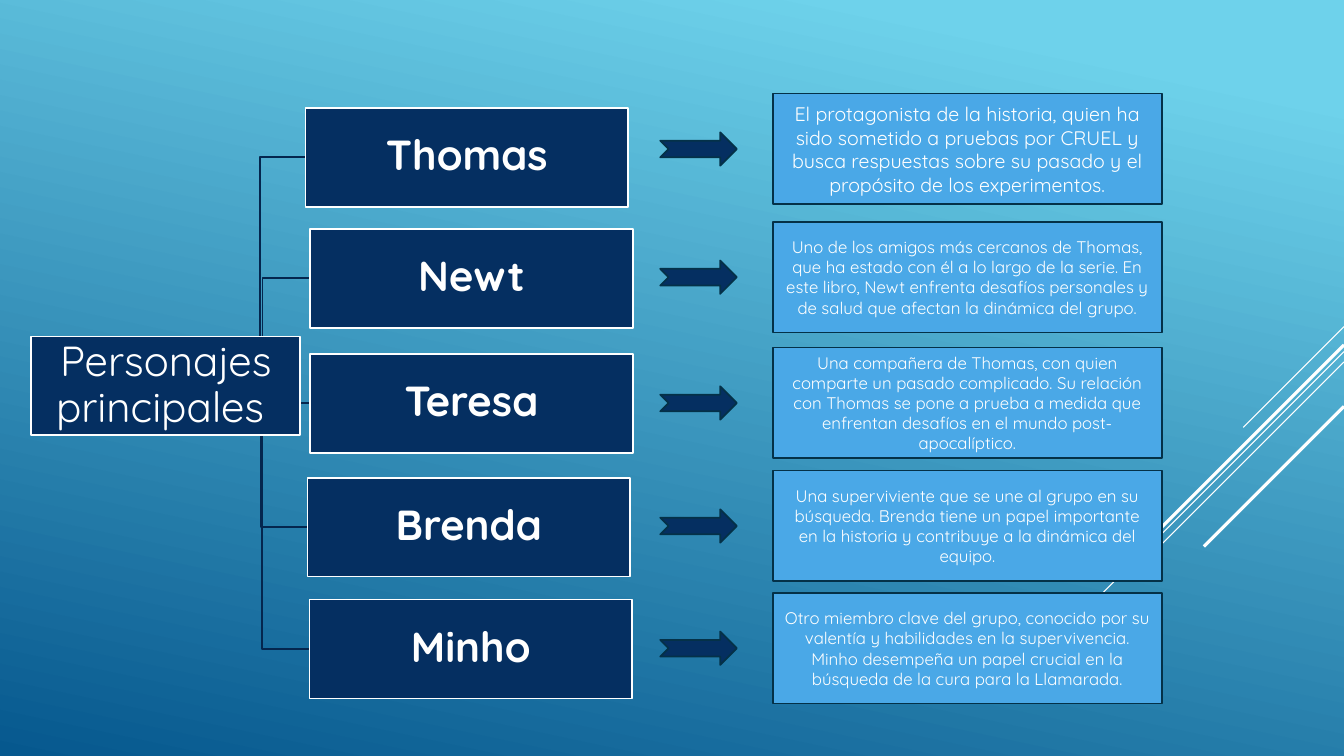
from lxml.etree import SubElement
from pptx import Presentation
from pptx.dml.color import RGBColor
from pptx.enum.shapes import MSO_CONNECTOR, MSO_SHAPE
from pptx.enum.text import MSO_ANCHOR, PP_ALIGN
from pptx.oxml.ns import qn
from pptx.util import Cm, Pt

FONT = "Quicksand"
WHITE, NAVY, SKY = "FFFFFF", "052F61", "4AA8E7"
BRANCH, OUTLINE = "04264E", "043148"
GRADIENT = [(0.1, "6ED2EB"), (1, "06588E")]
SLIDE_WIDTH, SLIDE_HEIGHT = 33.87, 19.05

ROOT_TEXT = "Personajes principales "
CHARACTERS = [
    ("Thomas", 7.7, 2.72, 2.36, 14,
     "El protagonista de la historia, quien ha sido sometido a pruebas por CRUEL y "
     "busca respuestas sobre su pasado y el propósito de los experimentos."),
    ("Newt", 7.82, 5.77, 5.59, 12,
     "Uno de los amigos más cercanos de Thomas, que ha estado con él a lo largo de la "
     "serie. En este libro, Newt enfrenta desafíos personales y de salud que afectan "
     "la dinámica del grupo."),
    ("Teresa", 7.82, 8.92, 8.76, 12,
     "Una compañera de Thomas, con quien comparte un pasado complicado. Su relación "
     "con Thomas se pone a prueba a medida que enfrentan desafíos en el mundo "
     "post-apocalíptico."),
    ("Brenda", 7.75, 12.04, 11.86, 12,
     "Una superviviente que se une al grupo en su búsqueda. Brenda tiene un papel "
     "importante en la historia y contribuye a la dinámica del equipo."),
    ("Minho", 7.8, 15.11, 14.94, 12,
     "Otro miembro clave del grupo, conocido por su valentía y habilidades en la "
     "supervivencia. Minho desempeña un papel crucial en la búsqueda de la cura para "
     "la Llamarada."),
]
DIAGONALS = [(8.23, 2.54, 0.75), (8.86, 8.28, 0.75), (9.12, 5.27, 0.75),
             (8.69, 4.85, 2.25), (10.24, 3.53, 2.25)]

ROOT_LEFT, ROOT_TOP, ROOT_WIDTH = 0.79, 8.48, 6.78
NAME_WIDTH, NAME_HEIGHT = 8.13, 2.49
ARROW_LEFT, ARROW_WIDTH, ARROW_HEIGHT = 16.64, 1.93, 0.84
STORY_LEFT, STORY_WIDTH, STORY_HEIGHT = 19.48, 9.8, 2.79
BRANCH_X, BRANCH_Y = 5.41, ROOT_TOP + NAME_HEIGHT / 2


def color(value):
    return RGBColor.from_string(value)


def set_line(shape, line_color, width=1.25):
    shape.line.color.rgb = color(line_color)
    shape.line.width = Pt(width)


def add_box(page, kind, left, top, width, height, fill, line_color):
    box = page.shapes.add_shape(kind, Cm(left), Cm(top), Cm(width), Cm(height))
    box.shadow.inherit = False
    box.fill.solid()
    box.fill.fore_color.rgb = color(fill)
    set_line(box, line_color)
    return box


def write(box, text, size, bold=False):
    frame = box.text_frame
    frame.word_wrap = True
    frame.vertical_anchor = MSO_ANCHOR.MIDDLE
    para = frame.paragraphs[0]
    para.alignment = PP_ALIGN.CENTER
    span = para.add_run()
    span.text = text
    span.font.name = FONT
    span.font.size = Pt(size)
    span.font.bold = bold
    span.font.color.rgb = color(WHITE)


def add_label(page, text, left, top, width, bold):
    box = add_box(page, MSO_SHAPE.RECTANGLE, left, top, width, NAME_HEIGHT, NAVY, WHITE)
    write(box, text, 30, bold)
    frame = box.text_frame
    frame.margin_left = frame.margin_right = Cm(0.05)
    frame.margin_top = frame.margin_bottom = Cm(0.05)
    frame.paragraphs[0].line_spacing = 0.9


def add_diagonal(page, top, reach, width):
    line = page.shapes.add_connector(
        MSO_CONNECTOR.STRAIGHT, Cm(SLIDE_WIDTH), Cm(top),
        Cm(SLIDE_WIDTH - reach), Cm(top + reach))
    set_line(line, WHITE, width)
    SubElement(line._element.spPr, qn("a:effectLst"))


def add_branch(page, left, top):
    middle, target = (BRANCH_X + left) / 2, top + NAME_HEIGHT / 2
    builder = page.shapes.build_freeform(Cm(BRANCH_X), Cm(BRANCH_Y))
    builder.add_line_segments(
        [(Cm(middle), Cm(BRANCH_Y)), (Cm(middle), Cm(target)), (Cm(left), Cm(target))],
        close=False)
    branch = builder.convert_to_shape()
    branch.shadow.inherit = False
    branch.fill.background()
    set_line(branch, BRANCH)


def main():
    deck = Presentation()
    deck.slide_width, deck.slide_height = Cm(SLIDE_WIDTH), Cm(SLIDE_HEIGHT)
    page = deck.slides.add_slide(deck.slide_layouts[6])

    backdrop = page.background.fill
    backdrop.gradient()
    backdrop.gradient_angle = 360 - 102
    for stop, (position, value) in zip(backdrop.gradient_stops, GRADIENT):
        stop.position = position
        stop.color.rgb = color(value)

    for diagonal in DIAGONALS:
        add_diagonal(page, *diagonal)
    for _, left, top, *_ in reversed(CHARACTERS):
        add_branch(page, left, top)

    add_label(page, ROOT_TEXT, ROOT_LEFT, ROOT_TOP, ROOT_WIDTH, False)
    for name, left, top, story_top, size, story in CHARACTERS:
        add_label(page, name, left, top, NAME_WIDTH, True)
        arrow_top = story_top + (STORY_HEIGHT - ARROW_HEIGHT) / 2
        add_box(page, MSO_SHAPE.NOTCHED_RIGHT_ARROW, ARROW_LEFT, arrow_top,
                ARROW_WIDTH, ARROW_HEIGHT, NAVY, OUTLINE)
        box = add_box(page, MSO_SHAPE.RECTANGLE, STORY_LEFT, story_top,
                      STORY_WIDTH, STORY_HEIGHT, SKY, OUTLINE)
        write(box, story, size)

    deck.save("out.pptx")


if __name__ == "__main__":
    main()
